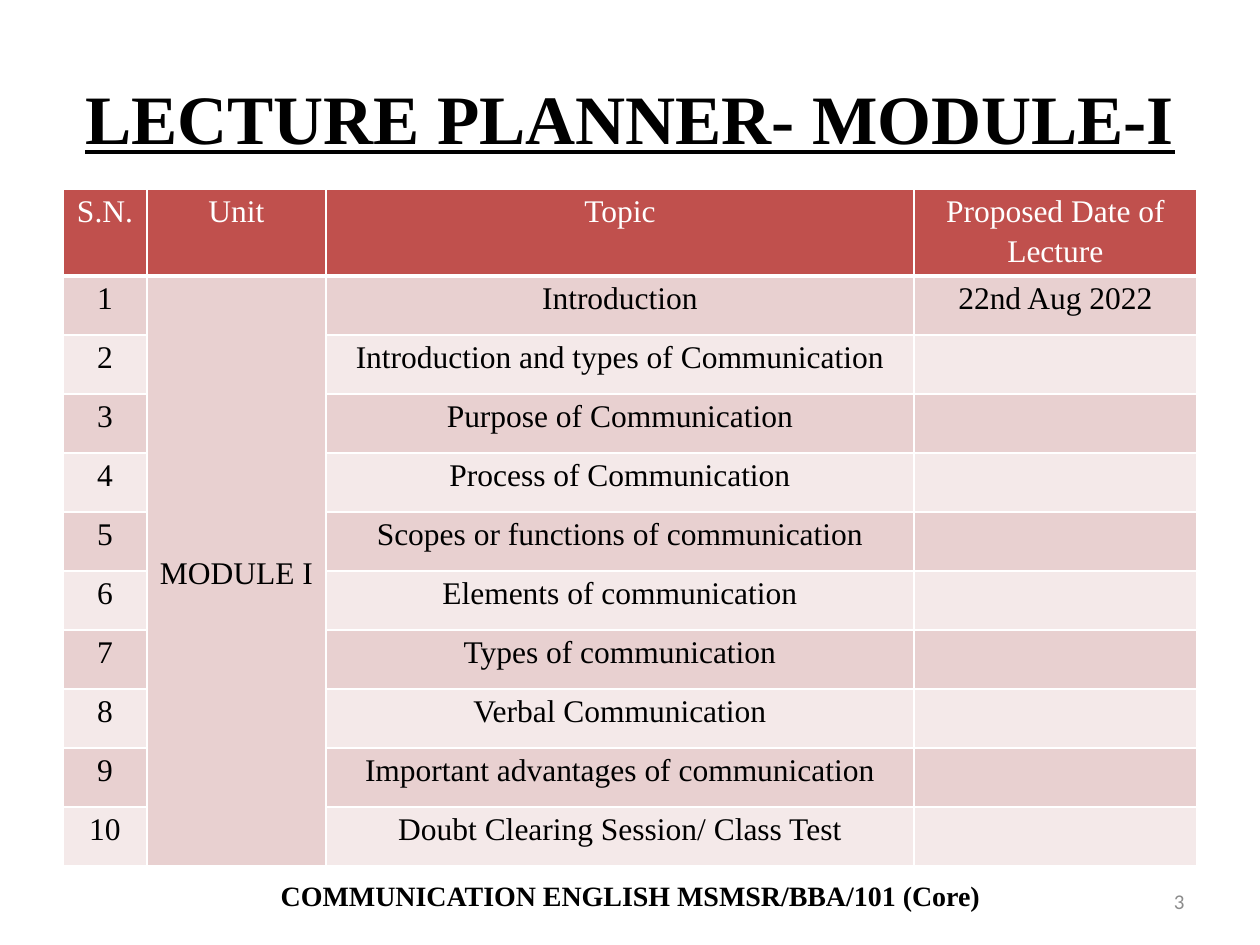
from dataclasses import dataclass

from lxml.etree import SubElement
from pptx import Presentation
from pptx.dml.color import RGBColor
from pptx.enum.text import MSO_ANCHOR, PP_ALIGN
from pptx.oxml.ns import qn
from pptx.util import Emu, Pt

EMU_PER_INCH = 914400
PX_PER_INCH = 126


@dataclass(frozen=True)
class Theme:
    serif: str = "Times New Roman"
    sans: str = "Calibri"
    ink: str = "000000"
    white: str = "FFFFFF"
    gray: str = "8C8C8C"
    header: str = "C0504D"
    bands: tuple[str, str] = ("E8D0D0", "F4E9E9")
    title_size: float = 39.6
    table_size: int = 18
    footer_size: int = 16
    number_size: int = 12


THEME = Theme()


@dataclass(frozen=True)
class Label:
    text: str
    box: tuple[int, int, int, int]
    size: float
    font: str = THEME.serif
    color: str = THEME.ink
    bold: bool = False
    underline: bool = False
    align: PP_ALIGN = PP_ALIGN.CENTER
    anchor: MSO_ANCHOR = MSO_ANCHOR.MIDDLE


@dataclass(frozen=True)
class Lecture:
    topic: str
    date: str = ""


LABELS = [
    Label("LECTURE PLANNER- MODULE-I", (63, 38, 1134, 157), THEME.title_size,
          bold=True, underline=True),
    Label("COMMUNICATION ENGLISH MSMSR/BBA/101 (Core)", (116, 872, 1029, 47),
          THEME.footer_size, bold=True, anchor=MSO_ANCHOR.TOP),
    Label("3", (903, 876, 294, 50), THEME.number_size, THEME.sans, THEME.gray,
          align=PP_ALIGN.RIGHT),
]

HEADINGS = ["S.N.", "Unit", "Topic", "Proposed Date of Lecture"]
UNIT = "MODULE I"
LECTURES = [
    Lecture("Introduction", "22nd Aug 2022"),
    Lecture("Introduction and types of Communication"),
    Lecture("Purpose of Communication"),
    Lecture("Process of Communication"),
    Lecture("Scopes or functions of communication"),
    Lecture("Elements of communication"),
    Lecture("Types of communication"),
    Lecture("Verbal Communication"),
    Lecture("Important advantages of communication"),
    Lecture("Doubt Clearing Session/ Class Test"),
]

TABLE_LEFT, TABLE_TOP = 63, 189
COLUMN_WIDTHS = [84, 179, 588, 283]
HEADER_HEIGHT, ROW_HEIGHT = 80, 59
CELL_INSET = 9


def px(n: int) -> Emu:
    return Emu(round(n * EMU_PER_INCH / PX_PER_INCH))


def style_paragraph(p, font: str, size: float, color: str, align: PP_ALIGN,
                    bold: bool = False, underline: bool = False) -> None:
    p.alignment = align
    p.font.name = font
    p.font.size = Pt(size)
    p.font.bold = bold
    p.font.underline = underline
    p.font.color.rgb = RGBColor.from_string(color)


def add_label(slide, label: Label) -> None:
    tf = slide.shapes.add_textbox(*map(px, label.box)).text_frame
    tf.word_wrap = True
    tf.vertical_anchor = label.anchor
    p = tf.paragraphs[0]
    p.text = label.text
    style_paragraph(p, label.font, label.size, label.color, label.align,
                    label.bold, label.underline)


def set_borders(cell, top: int = 1, bottom: int = 1) -> None:
    """Draw white cell edges, with widths in points; call before filling."""
    tc_pr = cell._tc.get_or_add_tcPr()
    for side, width in (("L", 1), ("R", 1), ("T", top), ("B", bottom)):
        ln = SubElement(tc_pr, qn(f"a:ln{side}"), w=str(Pt(width)))
        fill = SubElement(ln, qn("a:solidFill"))
        SubElement(fill, qn("a:srgbClr"), val=THEME.white)


def fill_cell(cell, text: str, row: int) -> None:
    is_header = row == 0
    set_borders(cell, top=3 if row == 1 else 1, bottom=3 if is_header else 1)
    color = THEME.header if is_header else THEME.bands[(row - 1) % 2]
    cell.fill.solid()
    cell.fill.fore_color.rgb = RGBColor.from_string(color)
    cell.margin_left = cell.margin_right = px(CELL_INSET)
    cell.margin_top = cell.margin_bottom = 0
    p = cell.text_frame.paragraphs[0]
    p.text = text
    p.line_spacing = 1.15
    style_paragraph(p, THEME.serif, THEME.table_size,
                    THEME.white if is_header else THEME.ink, PP_ALIGN.CENTER)


def add_planner(slide) -> None:
    rows = [HEADINGS] + [
        [str(n), UNIT if n == 1 else "", lecture.topic, lecture.date]
        for n, lecture in enumerate(LECTURES, start=1)
    ]
    heights = [HEADER_HEIGHT] + [ROW_HEIGHT] * len(LECTURES)
    table = slide.shapes.add_table(
        len(rows), len(HEADINGS), px(TABLE_LEFT), px(TABLE_TOP),
        px(sum(COLUMN_WIDTHS)), px(sum(heights))).table
    table.horz_banding = False
    for column, width in zip(table.columns, COLUMN_WIDTHS):
        column.width = px(width)
    for r, (texts, height) in enumerate(zip(rows, heights)):
        table.rows[r].height = px(height)
        for c, text in enumerate(texts):
            fill_cell(table.cell(r, c), text, r)
    unit_cell = table.cell(1, 1)
    unit_cell.merge(table.cell(len(LECTURES), 1))
    unit_cell.vertical_anchor = MSO_ANCHOR.MIDDLE


def main() -> None:
    prs = Presentation()
    prs.slide_width, prs.slide_height = px(1260), px(945)
    s = prs.slides.add_slide(prs.slide_layouts[6])
    title, *footers = LABELS
    add_label(s, title)
    add_planner(s)
    for label in footers:
        add_label(s, label)
    prs.save("out.pptx")


if __name__ == "__main__":
    main()
